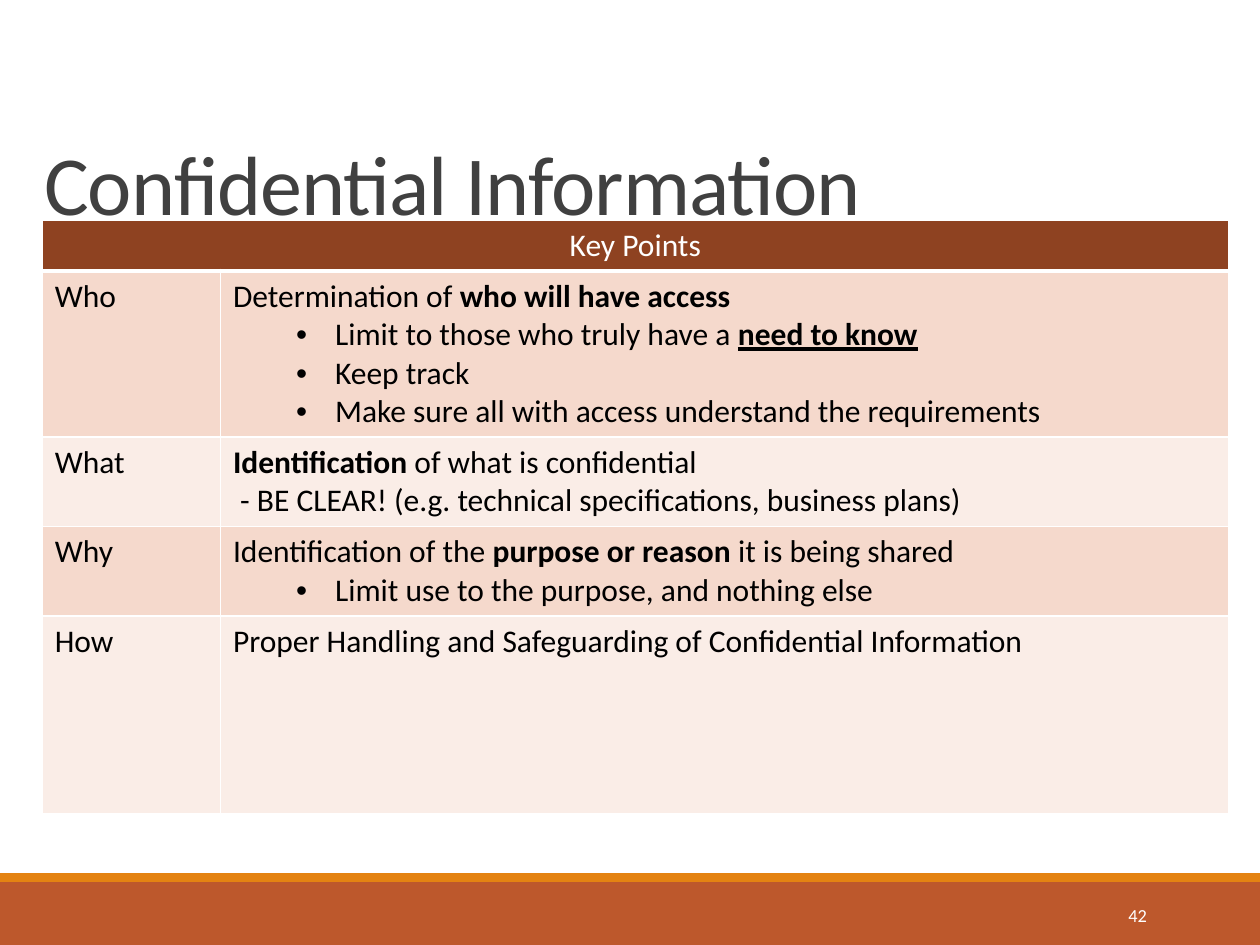
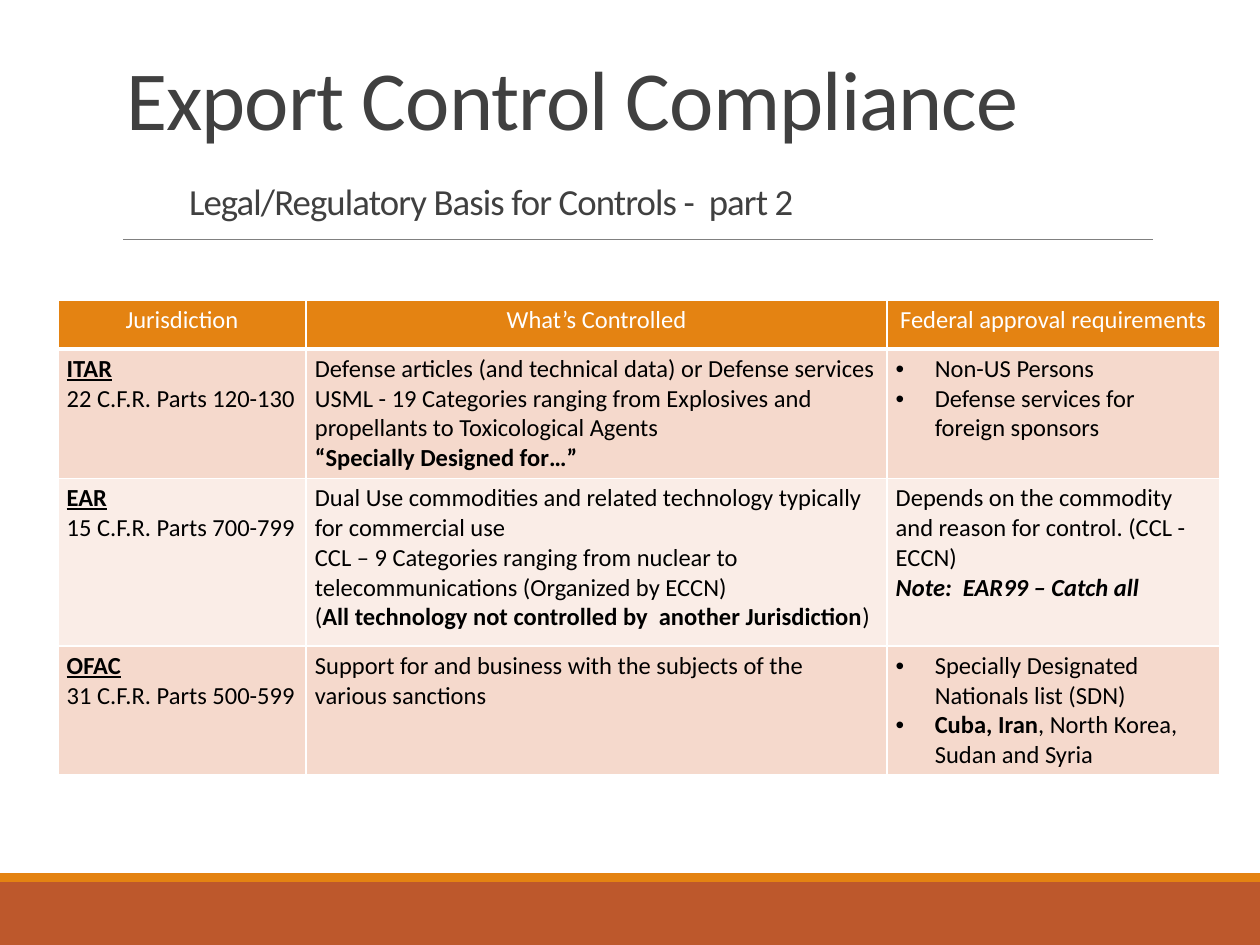
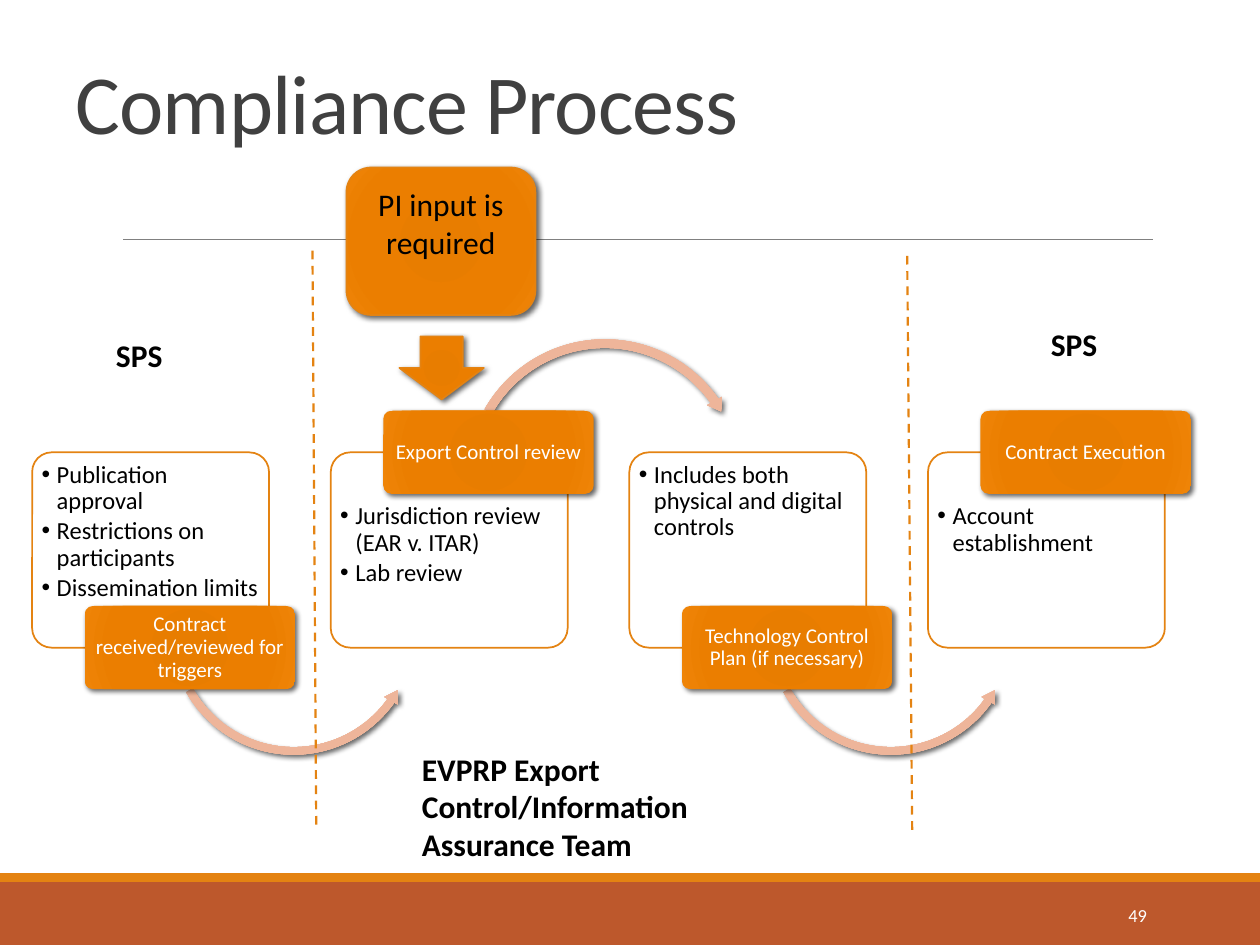
from lxml.etree import SubElement
from pptx import Presentation
from pptx.dml.color import RGBColor
from pptx.enum.dml import MSO_LINE
from pptx.enum.shapes import MSO_CONNECTOR, MSO_SHAPE
from pptx.enum.text import MSO_ANCHOR as ANCHOR, MSO_AUTO_SIZE, PP_ALIGN as ALIGN
from pptx.oxml.ns import qn
from pptx.oxml.xmlchemy import OxmlElement
from pptx.util import Inches, Pt

# Shared style
WHITE = RGBColor(0xFF, 0xFF, 0xFF)
BLACK = RGBColor(0x00, 0x00, 0x00)
INK = RGBColor(0x40, 0x40, 0x40)
GREY = RGBColor(0x80, 0x80, 0x80)
RUST = RGBColor(0xBD, 0x58, 0x2C)
ORANGE = RGBColor(0xE4, 0x83, 0x12)
BROWN = RGBColor(0x8E, 0x42, 0x21)
BAND_DARK = RGBColor(0xF5, 0xD9, 0xCC)
BAND_LIGHT = RGBColor(0xFA, 0xED, 0xE7)
STOPS = (0, 34, 70, 100)
GLOW_ORANGE = [RGBColor.from_string(c) for c in ("E57B00", "E87D00", "EB7E00", "EF8407")]
GLOW_PEACH = [RGBColor.from_string(c) for c in ("E8B196", "E9B399", "EEB59A", "F3C0A8")]
FONT = "Calibri"
COLS, ROWS = 100, 75  # grid cells across and down the slide


def put(obj, values):
    for name, value in values.items():
        setattr(obj, name, value)


def node(parent, tag, **attrs):
    return SubElement(parent, qn(tag), {k: str(v) for k, v in attrs.items()})


def color_node(parent, color, **children):
    clr = node(parent, "a:srgbClr", val=color)
    for tag, value in children.items():
        node(clr, f"a:{tag}", val=value)


def margins(left, top, right=None, bottom=None):
    sides = (left, top, left if right is None else right, top if bottom is None else bottom)
    return {f"margin_{side}": Inches(v)
            for side, v in zip(("left", "top", "right", "bottom"), sides)}


class Deck:
    def __init__(self):
        self.prs = Presentation()
        put(self.prs, {"slide_width": Inches(10), "slide_height": Inches(7.5)})
        self.s = None

    def grid(self, *at):
        """Turn columns and rows, in turn, into lengths."""
        cells = (self.prs.slide_width / COLS, self.prs.slide_height / ROWS)
        return [round(v * cells[i % 2]) for i, v in enumerate(at)]

    def slide(self, title, at, number=None):
        self.s = self.prs.slides.add_slide(self.prs.slide_layouts[5])
        self.shape(MSO_SHAPE.RECTANGLE, (0, 70, COLS, 5), RUST)
        self.shape(MSO_SHAPE.RECTANGLE, (0, 69.3, COLS, 0.7), ORANGE)
        self.line((9.8, 19, 91.5, 19), GREY, 0.5)
        sp = self.s.shapes.title
        put(sp, dict(zip(("left", "top", "width", "height"), self.grid(*at))))
        self.set_text(sp.text_frame, [title], 48, INK, spc=-50,
                      para={"line_spacing": 0.85, "alignment": ALIGN.LEFT},
                      frame={"vertical_anchor": ANCHOR.BOTTOM, "auto_size": MSO_AUTO_SIZE.NONE})
        if number:
            self.text((81.2, 70.6, 10.8, 4), [number], 10.5, WHITE,
                      para={"alignment": ALIGN.RIGHT}, frame={"vertical_anchor": ANCHOR.MIDDLE})

    def set_text(self, tf, paras, size, color=BLACK, spc=None, hang=(0, 0), para=None, frame=None):
        """A paragraph is a string or a list of runs; a run is a string or (text, "biu" marks[, size])."""
        put(tf, {"word_wrap": True, **(frame or {})})
        for i, runs in enumerate(paras):
            p = tf.add_paragraph() if i else tf.paragraphs[0]
            put(p, para or {})
            runs = [runs] if isinstance(runs, str) else runs
            for run in runs:
                words, marks, *own_size = (run, "") if isinstance(run, str) else run
                if words.startswith("•"):
                    words = words[1:]
                    self.bullet(p, *hang)
                if words.startswith("\n"):
                    words = words[1:]
                    p.add_line_break()
                r = p.add_run()
                r.text = words
                put(r.font, {"name": FONT, "size": Pt(own_size[0] if own_size else size),
                             "bold": "b" in marks, "italic": "i" in marks,
                             "underline": "u" in marks})
                r.font.color.rgb = color
                if spc:
                    r._r.get_or_add_rPr().set("spc", str(spc))

    def bullet(self, p, left, indent):
        pPr = p._p.get_or_add_pPr()
        pPr.set("marL", str(Inches(left)))
        pPr.set("indent", str(Inches(indent)))
        node(pPr, "a:buFont", typeface="Arial")
        node(pPr, "a:buChar", char="•")

    def text(self, at, paras, size, color=BLACK, **style):
        self.set_text(self.s.shapes.add_textbox(*self.grid(*at)).text_frame,
                      paras, size, color, **style)

    def shape(self, kind, at, fill, line=None, adj=()):
        """A list of colours as fill gives a radial gradient and a shadow."""
        sp = self.s.shapes.add_shape(kind, *self.grid(*at))
        sp.shadow.inherit = False
        for i, value in enumerate(adj):
            sp.adjustments[i] = value
        if isinstance(fill, list):
            self.glow(sp, fill)
        else:
            sp.fill.solid()
            sp.fill.fore_color.rgb = fill
        if line:
            sp.line.color.rgb = line
            sp.line.width = Pt(1)
        else:
            sp.line.fill.background()
        return sp

    def glow(self, sp, colors):
        sp.fill.background()
        spPr = sp._element.spPr
        grad = OxmlElement("a:gradFill")
        spPr.replace(spPr.find(qn("a:noFill")), grad)
        stops = node(grad, "a:gsLst")
        for pos, color in zip(STOPS, colors):
            color_node(node(stops, "a:gs", pos=pos * 1000), color)
        node(node(grad, "a:path", path="circle"), "a:fillToRect",
             **dict.fromkeys("ltrb", 100000))
        shadow = node(spPr.find(qn("a:effectLst")), "a:outerShdw",
                      blurRad=Pt(3), dist=Pt(2), dir=45 * 60000, rotWithShape=0)
        color_node(shadow, BLACK, alpha=60000)

    def line(self, ends, color, width, dash=None):
        c = self.s.shapes.add_connector(MSO_CONNECTOR.STRAIGHT, *self.grid(*ends))
        c.line.color.rgb = color
        put(c.line, {"width": Pt(width), "dash_style": dash})
        node(c._element.spPr, "a:effectLst")

    def table(self, origin, cols, rows, cells, size, head_fill, hang, inset):
        at = self.grid(*origin, sum(cols), sum(rows))
        t = self.s.shapes.add_table(len(rows), len(cols), *at).table
        put(t, {"first_row": False, "horz_banding": False})
        for col, w in zip(t.columns, cols):
            col.width = self.grid(w)[0]
        for row, h in zip(t.rows, rows):
            row.height = self.grid(0, h)[1]
        for r, line in enumerate(cells):
            if len(line) < len(cols):
                t.cell(r, 0).merge(t.cell(r, len(cols) - 1))
            for c, paras in enumerate(line):
                self.set_text(t.cell(r, c).text_frame, paras, size, BLACK if r else WHITE,
                              hang=hang, para={"alignment": ALIGN.LEFT if r else ALIGN.CENTER})
            for c in range(len(cols)):
                cell = t.cell(r, c)
                put(cell, margins(*inset))
                cell.fill.solid()
                cell.fill.fore_color.rgb = (BAND_LIGHT, BAND_DARK)[r % 2] if r else head_fill
                self.borders(cell, 1 if r else 3)

    def borders(self, cell, bottom):
        tcPr = cell._tc.get_or_add_tcPr()
        for i, (side, width) in enumerate(zip("LRTB", (1, 1, 1, bottom))):
            ln = OxmlElement(f"a:ln{side}")
            ln.set("w", str(Pt(width)))
            color_node(node(ln, "a:solidFill"), WHITE)
            tcPr.insert(i, ln)

    def card(self, at, points, top):
        sp = self.shape(MSO_SHAPE.ROUNDED_RECTANGLE, at, WHITE, ORANGE, (0.1,))
        clr = sp._element.spPr.find(qn("a:solidFill"))[0]
        node(clr, "a:alpha", val=90000)
        self.set_text(sp.text_frame, points, 14, hang=(0.12, -0.12),
                      para={"line_spacing": 0.9, "space_after": Pt(2), "alignment": ALIGN.LEFT},
                      frame={"vertical_anchor": ANCHOR.TOP, **margins(0.03, top, bottom=0.03)})

    def label(self, at, words):
        sp = self.shape(MSO_SHAPE.ROUNDED_RECTANGLE, at, GLOW_ORANGE, adj=(0.1,))
        self.set_text(sp.text_frame, [words], 12, WHITE,
                      para={"line_spacing": 0.9, "alignment": ALIGN.CENTER},
                      frame={"vertical_anchor": ANCHOR.MIDDLE, **margins(0.03, 0.02)})


def confidential_information(d):
    d.slide("Confidential Information", (2.5, 3.1, 82.5, 15.9), "42")
    cells = [
        [["Key Points"]],
        [["Who"],
         [["Determination of ", ("who will have access", "b")],
          ["•Limit to those who truly have a ", ("need to know", "bu")],
          "•Keep track",
          "•Make sure all with access understand the requirements"]],
        [["What"],
         [[("Identification", "b"), " of what is confidential"],
          " - BE CLEAR! (e.g. technical specifications, business plans)"]],
        [["Why"],
         [["Identification of the ", ("purpose or reason ", "b"), "it is being shared"],
          "•Limit use to the purpose, and nothing else"]],
        [["How"], ["Proper Handling and Safeguarding of Confidential Information"]],
    ]
    d.table((3.35, 17.5), (14.15, 80), (4, 13.2, 7.1, 7.1, 15.7), cells, 18,
            BROWN, (0.81, -0.31), (0.1, 0.05))


def export_control(d):
    d.slide(["Export Control Compliance", "\n\t",
             ("Legal/Regulatory Basis for Controls -  part 2", "", 21)], (9, 3.1, 82.5, 15.9))
    cells = [
        [["Jurisdiction"], ["What’s Controlled"], ["Federal approval requirements"]],
        [[[("ITAR", "bu")], "22 C.F.R. Parts 120-130"],
         ["Defense articles (and technical data) or Defense services",
          "USML - 19 Categories ranging from Explosives and propellants to Toxicological Agents",
          [("“Specially Designed for…”", "b")]],
         ["•Non-US Persons", "•Defense services for foreign sponsors"]],
        [[[("EAR", "bu")], "15 C.F.R. Parts 700-799"],
         ["Dual Use commodities and related technology typically for commercial use",
          "CCL – 9 Categories ranging from nuclear to telecommunications (Organized by ECCN)",
          ["(", ("All technology not controlled by  another Jurisdiction", "b"), ")"]],
         ["Depends on the commodity and reason for control. (CCL - ECCN)",
          [("Note:  EAR99 – Catch all", "bi")]]],
        [[[("OFAC", "bu")], "31 C.F.R. Parts 500-599"],
         ["Support for and business with the subjects of the various sanctions"],
         ["•Specially Designated Nationals list (SDN)",
          [("•Cuba, Iran", "b"), ", North Korea, Sudan and Syria"]]],
    ]
    d.table((4.6, 23.8), (19.7, 46.1, 26.4), (3.9, 10.2, 13.3, 10.2), cells, 14,
            ORANGE, (0.31, -0.31), (0.07, 0.04))


def compliance_process(d):
    d.slide("Compliance Process", (5, 0, 81.7, 12.5), "49")

    # Steps: labels sit below and above the cards in turn
    steps = [
        ("Contract received/reviewed for triggers",
         ["•Publication approval", "•Restrictions on participants", "•Dissemination limits"]),
        ("Export Control review", ["•Jurisdiction review (EAR v. ITAR)", "•Lab review"]),
        ("Technology Control Plan (if necessary)",
         ["•Includes both physical and digital controls"]),
        ("Contract Execution", ["•Account establishment"]),
    ]
    arrows = [
        (MSO_SHAPE.LEFT_CIRCULAR_ARROW, 10.65, 40, 20.2, (0.03, 3.56, 21.31, 90.25, 0.03)),
        (MSO_SHAPE.CIRCULAR_ARROW, 10.45, 26.6, 22.6, (0.03, 3.16, 195.09, 125.76, 0.03)),
    ]
    for i, (name, points) in enumerate(steps):
        x, above = 2.55 + 23.7 * i, i % 2
        d.card((x, 35.9, 18.8, 15.5), points, 0.36 if above else 0.03)
        if i < len(steps) - 1:
            kind, dx, y, side, adj = arrows[above]
            d.shape(kind, (x + dx, y, side, side), GLOW_PEACH, adj=adj)
        d.label((x + 4.17, 32.6 if above else 48.1, 16.7, 6.6), name)

    # Teams and the borders between them
    for at, team, align in (
            ((4.4, 26.2, 13.3, 4), "SPS", ALIGN.CENTER),
            ((32.5, 59, 32.7, 10.1), "EVPRP Export Control/Information Assurance Team", ALIGN.LEFT),
            ((78.6, 25.3, 13.3, 4), "SPS", ALIGN.CENTER)):
        d.text(at, [[(team, "b")]], 18, para={"alignment": align})
    for ends in ((24.8, 19.9, 25.1, 65.7), (72, 20.3, 72.4, 66.1)):
        d.line(ends, ORANGE, 1.25, MSO_LINE.DASH)

    # Call for input
    sp = d.shape(MSO_SHAPE.ROUNDED_RECTANGLE, (27.5, 13.3, 15, 11.7), GLOW_ORANGE, ORANGE)
    d.set_text(sp.text_frame, ["PI input is required"], 18, para={"alignment": ALIGN.CENTER},
               frame={"vertical_anchor": ANCHOR.TOP, **margins(0.17, 0.08)})
    d.shape(MSO_SHAPE.DOWN_ARROW, (31.7, 26.7, 6.7, 5), GLOW_ORANGE, ORANGE)


def main():
    d = Deck()
    for build in (confidential_information, export_control, compliance_process):
        build(d)
    d.prs.save("out.pptx")


if __name__ == "__main__":
    main()
